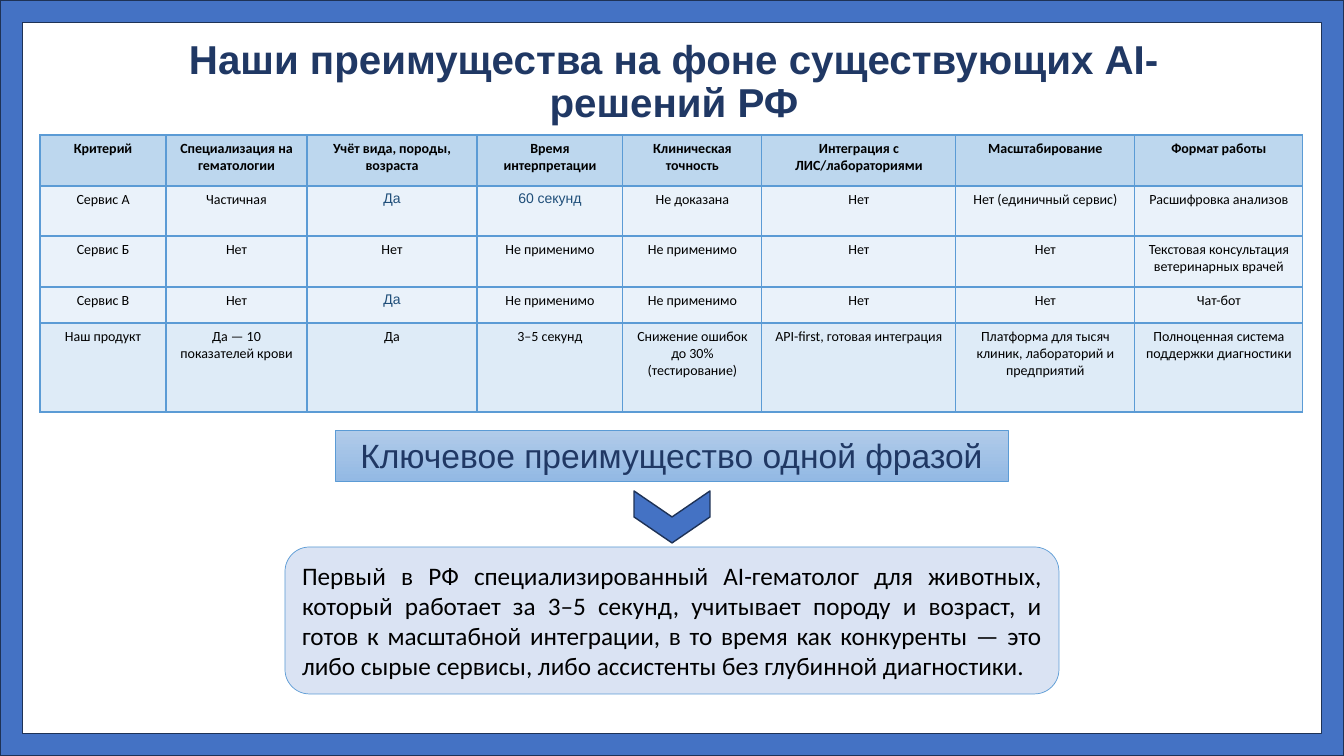
from dataclasses import dataclass
from typing import Optional

from lxml.etree import SubElement
from pptx import Presentation
from pptx.dml.color import RGBColor
from pptx.enum.shapes import MSO_SHAPE
from pptx.enum.text import MSO_ANCHOR, MSO_AUTO_SIZE, PP_ALIGN
from pptx.oxml.ns import qn
from pptx.util import Emu, Pt

COLORS = {
    "navy": "203864", "frame": "4472C4", "outline": "1E3256", "border": "5B9BD5",
    "header": "BDD7EE", "rival": "EAF2FA", "ours": "DEEBF7", "accent": "1F4E79",
    "summary": "DAE3F3", "grad_top": "B1CBE9", "grad_bottom": "93B9E4", "black": "000000",
}


@dataclass(frozen=True)
class Block:
    kind: MSO_SHAPE
    box: tuple[int, int, int, int]
    fill: tuple[str, ...]
    line: str
    weight: float
    adj: Optional[float] = None
    rotation: int = 0
    text: str = ""
    size: int = 18
    font: str = "Calibri"
    color: str = "black"
    align: PP_ALIGN = PP_ALIGN.CENTER


@dataclass(frozen=True)
class Row:
    height: int
    fill: str
    cells: tuple[str, ...]
    bold: bool = False
    accents: tuple[int, ...] = ()


COLUMNS = (126, 141, 170, 146, 139, 194, 179, 168)

ROWS = (
    Row(51, "header", (
        "Критерий", "Специализация на гематологии", "Учёт вида, породы, возраста",
        "Время интерпретации", "Клиническая точность", "Интеграция с ЛИС/лабораториями",
        "Масштабирование", "Формат работы"), bold=True),
    Row(50, "rival", (
        "Сервис А", "Частичная", "Да", "60 секунд", "Не доказана", "Нет",
        "Нет (единичный сервис)", "Расшифровка анализов"), accents=(2, 3)),
    Row(51, "rival", (
        "Сервис Б", "Нет", "Нет", "Не применимо", "Не применимо", "Нет", "Нет",
        "Текстовая консультация ветеринарных врачей")),
    Row(36, "rival", (
        "Сервис В", "Нет", "Да", "Не применимо", "Не применимо", "Нет", "Нет",
        "Чат-бот"), accents=(2,)),
    Row(89, "ours", (
        "Наш продукт", "Да — 10 показателей крови", "Да", "3–5 секунд",
        "Снижение ошибок до 30% (тестирование)", "API-first, готовая интеграция",
        "Платформа для тысяч клиник, лабораторий и предприятий",
        "Полноценная система поддержки диагностики")),
)

FRAME = Block(MSO_SHAPE.FRAME, (0, 0, 1344, 756), ("frame",), "outline", 1, adj=0.03)

BLOCKS = (
    Block(MSO_SHAPE.ROUNDED_RECTANGLE, (285, 547, 774, 147), ("summary",), "border", 0.5,
          text="Первый в РФ специализированный AI-гематолог для животных, который работает "
               "за 3–5 секунд, учитывает породу и возраст, и готов к масштабной интеграции, "
               "в то время как конкуренты — это либо сырые сервисы, либо ассистенты без "
               "глубинной диагностики.",
          align=PP_ALIGN.JUSTIFY),
    Block(MSO_SHAPE.RECTANGLE, (335, 430, 673, 51), ("grad_top", "grad_bottom"), "border", 0.5,
          text="Ключевое преимущество одной фразой", size=24, font="Arial", color="navy"),
    Block(MSO_SHAPE.CHEVRON, (646, 479, 52, 76), ("frame",), "outline", 1, rotation=90),
)


def px(n: int) -> Emu:
    return Emu(round(n * 914400 / 100.8))


def rgb(name: str) -> RGBColor:
    return RGBColor.from_string(COLORS[name])


def write(tf, text: str, *, size: float, font: str = "Calibri", color: str = "black",
          bold: bool = False, align: PP_ALIGN = PP_ALIGN.CENTER,
          spacing: Optional[float] = None) -> None:
    tf.word_wrap = True
    p = tf.paragraphs[0]
    p.alignment = align
    p.line_spacing = spacing
    r = p.add_run()
    r.text = text
    r.font.size = Pt(size)
    r.font.name = font
    r.font.bold = bold
    r.font.color.rgb = rgb(color)


def add_title(s) -> None:
    sp = s.shapes.title
    sp.left, sp.top, sp.width, sp.height = map(px, (149, 28, 1050, 110))
    tf = sp.text_frame
    tf.auto_size = MSO_AUTO_SIZE.NONE
    tf.vertical_anchor = MSO_ANCHOR.MIDDLE
    write(tf, "Наши преимущества на фоне существующих AI-решений РФ",
          size=28.8, font="Arial", color="navy", bold=True, spacing=0.9)


def add_block(s, block: Block) -> None:
    sp = s.shapes.add_shape(block.kind, *map(px, block.box))
    sp.shadow.inherit = False
    sp.rotation = block.rotation
    if block.adj is not None:
        sp.adjustments[0] = block.adj
    if len(block.fill) == 1:
        sp.fill.solid()
        sp.fill.fore_color.rgb = rgb(block.fill[0])
    else:
        sp.fill.gradient()
        sp.fill.gradient_angle = 270
        for stop, name in zip(sp.fill.gradient_stops, block.fill):
            stop.color.rgb = rgb(name)
    sp.line.color.rgb = rgb(block.line)
    sp.line.width = Pt(block.weight)
    if block.text:
        sp.text_frame.vertical_anchor = MSO_ANCHOR.MIDDLE
        write(sp.text_frame, block.text, size=block.size, font=block.font,
              color=block.color, align=block.align)


def set_borders(cell, top: float, bottom: float) -> None:
    tcPr = cell._tc.get_or_add_tcPr()
    widths = {"a:lnL": 1, "a:lnR": 1, "a:lnT": top, "a:lnB": bottom}
    for i, (tag, width) in enumerate(widths.items()):
        ln = SubElement(tcPr, qn(tag), w=str(Pt(width)))
        SubElement(SubElement(ln, qn("a:solidFill")), qn("a:srgbClr"), val=COLORS["border"])
        tcPr.insert(i, ln)


def add_comparison(s) -> None:
    table = s.shapes.add_table(
        len(ROWS), len(COLUMNS), px(40), px(135),
        px(sum(COLUMNS)), px(sum(row.height for row in ROWS))).table
    for column, width in zip(table.columns, COLUMNS):
        column.width = px(width)
    for i, row in enumerate(ROWS):
        table.rows[i].height = px(row.height)
        for j, text in enumerate(row.cells):
            cell = table.cell(i, j)
            cell.fill.solid()
            cell.fill.fore_color.rgb = rgb(row.fill)
            set_borders(cell, top=2 if i == 1 else 1, bottom=2 if i == 0 else 1)
            accent = j in row.accents
            write(cell.text_frame, text, size=10, bold=row.bold,
                  font="Arial" if accent else "Calibri",
                  color="accent" if accent else "black")


def main() -> None:
    prs = Presentation()
    prs.slide_width, prs.slide_height = px(1344), px(756)
    s = prs.slides.add_slide(prs.slide_layouts[5])
    add_title(s)
    add_block(s, FRAME)
    add_comparison(s)
    for block in BLOCKS:
        add_block(s, block)
    prs.save("out.pptx")


if __name__ == "__main__":
    main()
